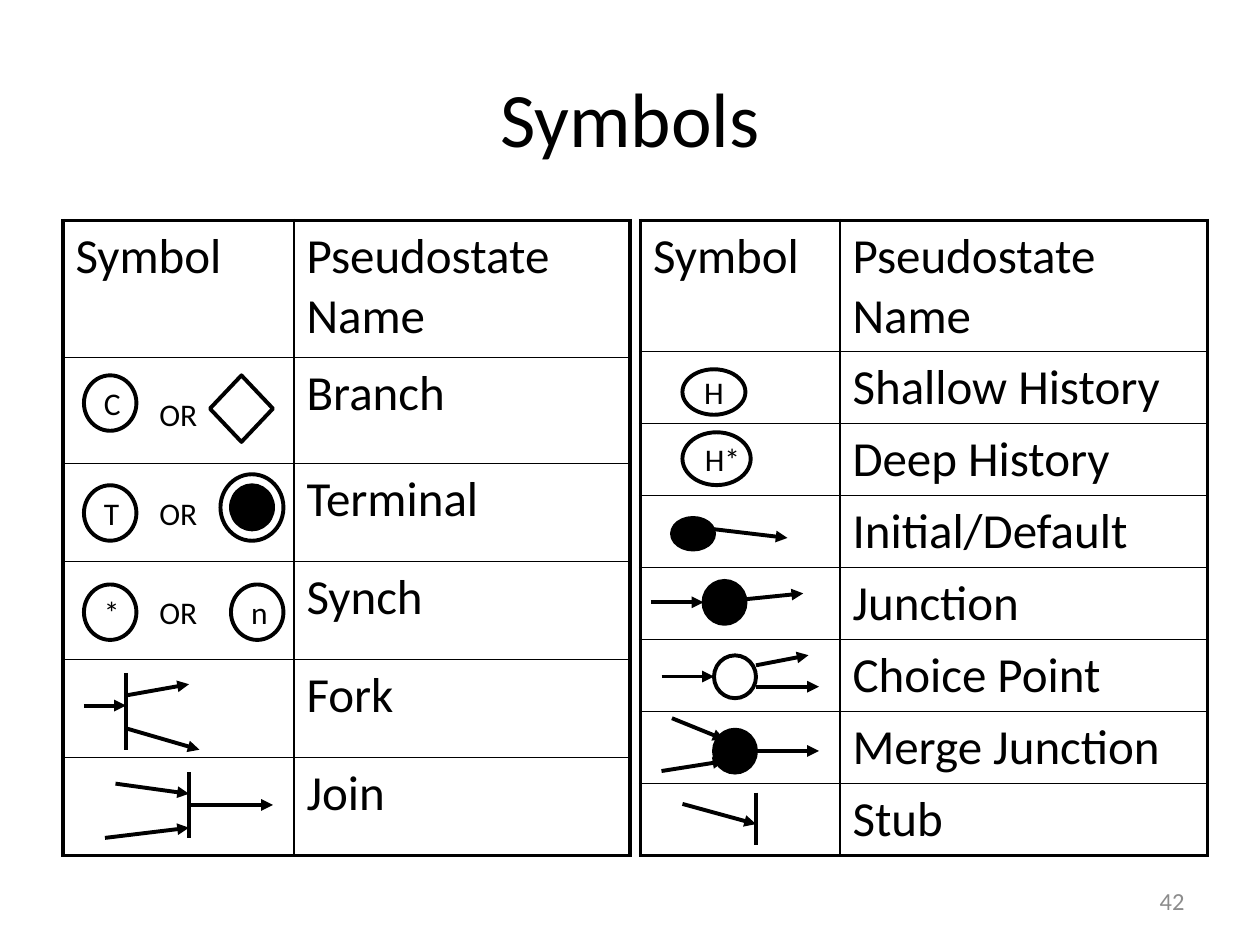
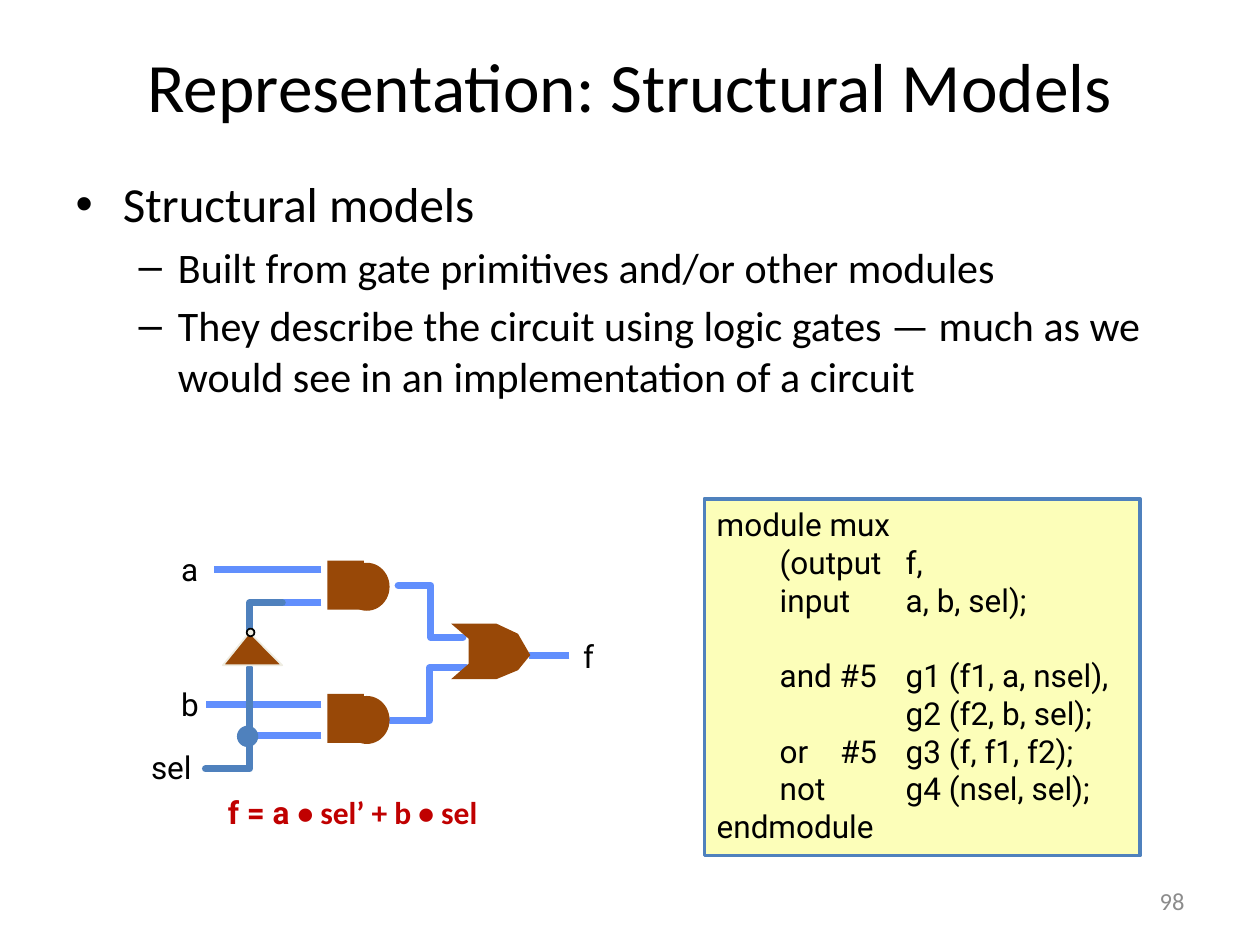
from dataclasses import dataclass
from typing import NamedTuple, Optional

from lxml.etree import SubElement
from pptx import Presentation
from pptx.dml.color import RGBColor
from pptx.enum.shapes import MSO_CONNECTOR as Connector, MSO_SHAPE as Preset
from pptx.enum.text import MSO_ANCHOR as Anchor, MSO_AUTO_SIZE as AutoSize, PP_ALIGN as Align
from pptx.oxml.ns import qn
from pptx.util import Pt


# ---- Theme ----
@dataclass(frozen=True)
class Theme:
    black: str = "000000"
    white: str = "FFFFFF"
    grey: str = "8C8C8C"
    blue: str = "4F81BD"
    wire: str = "618FFD"
    gate: str = "984807"
    cream: str = "FCFEB9"
    ivory: str = "EEECE1"
    red: str = "C00000"
    font: str = "Calibri"
    code_font: str = "Roboto"
    title: float = 44
    long_title: float = 39.6
    body: float = 28
    sub_body: float = 24
    label: float = 18
    page_number: float = 14
    thin: float = 1
    code_border: float = 2
    thick: float = 2.25
    wire_width: float = 4


THEME = Theme()


class Box(NamedTuple):
    left: float
    top: float
    width: float
    height: float


class Figure(NamedTuple):
    preset: Preset
    box: Box
    fill: str = THEME.white
    line: Optional[str] = THEME.black
    width: float = THEME.thick
    text: str = ""


class Line(NamedTuple):
    x1: float
    y1: float
    x2: float
    y2: float
    arrow: bool = True
    color: str = THEME.black
    width: float = THEME.thick


class Path(NamedTuple):
    points: list
    line: Optional[str] = None
    width: float = THEME.wire_width
    fill: Optional[str] = None


class Grid(NamedTuple):
    left: float
    columns: list
    heights: list
    names: list


# ---- Drawing functions ----
def color_of(value: str) -> RGBColor:
    return RGBColor.from_string(value)


def write(frame, text: str, *, size: float = THEME.label, font: str = THEME.font,
          color: str = THEME.black, bold: bool = False, align=None, level: int = 0,
          spacing=None, before=None, tabs=(), same_paragraph: bool = False):
    """Add a paragraph, or a run in the last one, to a text frame."""
    paragraph = frame.paragraphs[-1]
    if paragraph.runs and not same_paragraph:
        paragraph = frame.add_paragraph()
    if not same_paragraph:
        paragraph.level = level
        paragraph.alignment = align
        paragraph.line_spacing = spacing
        if before is not None:
            paragraph.space_before = Pt(before)
        if tabs:
            tab_list = SubElement(paragraph._p.get_or_add_pPr(), qn("a:tabLst"))
            for stop in tabs:
                SubElement(tab_list, qn("a:tab"), pos=str(int(Pt(stop))), algn="l")
    run = paragraph.add_run()
    run.text = text
    run.font.size = Pt(size)
    run.font.name = font
    run.font.bold = bold
    run.font.color.rgb = color_of(color)


def place(shape, box: Box) -> None:
    shape.left, shape.top, shape.width, shape.height = map(Pt, box)


def paint(shape, fill: Optional[str], line: Optional[str], width: float) -> None:
    shape.shadow.inherit = False
    if fill:
        shape.fill.solid()
        shape.fill.fore_color.rgb = color_of(fill)
    else:
        shape.fill.background()
    if line:
        shape.line.color.rgb = color_of(line)
        shape.line.width = Pt(width)
    else:
        shape.line.fill.background()


def add_figure(slide, figure: Figure):
    shape = slide.shapes.add_shape(figure.preset, *map(Pt, figure.box))
    paint(shape, figure.fill, figure.line, figure.width)
    if figure.text:
        frame = shape.text_frame
        frame.word_wrap = False
        frame.vertical_anchor = Anchor.MIDDLE
        write(frame, figure.text, align=Align.LEFT)
    return shape


def add_line(slide, line: Line) -> None:
    connector = slide.shapes.add_connector(Connector.STRAIGHT, *map(Pt, line[:4]))
    connector.line.color.rgb = color_of(line.color)
    connector.line.width = Pt(line.width)
    if line.arrow:
        SubElement(connector.line._get_or_add_ln(), qn("a:tailEnd"), type="triangle")
    SubElement(connector._element.spPr, qn("a:effectLst"))


def add_path(slide, path: Path) -> None:
    points = [(Pt(x), Pt(y)) for x, y in path.points]
    builder = slide.shapes.build_freeform(*points[0])
    builder.add_line_segments(points[1:], close=path.fill is not None)
    shape = builder.convert_to_shape()
    paint(shape, path.fill, path.line, path.width)
    if not path.fill:
        shape.line._get_or_add_ln().set("cap", "rnd")


def add_label(slide, box: Box, *, wrap: bool = False, anchor=Anchor.TOP):
    frame = slide.shapes.add_textbox(*map(Pt, box)).text_frame
    frame.word_wrap = wrap
    frame.vertical_anchor = anchor
    return frame


def set_borders(cell, widths: dict) -> None:
    properties = cell._tc.get_or_add_tcPr()
    for index, (side, width) in enumerate(widths.items()):
        border = SubElement(properties, qn(f"a:ln{side}"), w=str(int(Pt(width))))
        fill = SubElement(border, qn("a:solidFill"))
        SubElement(fill, qn("a:srgbClr"), val=THEME.black)
        properties.insert(index, border)


def add_grid(slide, grid: Grid, top: float) -> None:
    rows = [("Symbol", "Pseudostate Name")] + [("", name) for name in grid.names]
    box = Box(grid.left, top, sum(grid.columns), sum(grid.heights))
    table = slide.shapes.add_table(len(rows), len(grid.columns), *map(Pt, box)).table
    table.first_row = table.horz_banding = False
    for column, width in zip(table.columns, grid.columns):
        column.width = Pt(width)
    for r, (texts, height) in enumerate(zip(rows, grid.heights)):
        table.rows[r].height = Pt(height)
        for c, text in enumerate(texts):
            cell = table.cell(r, c)
            cell.margin_bottom = 0
            cell.fill.background()
            outer = {"L": c == 0, "R": c == 1, "T": r == 0, "B": r == len(rows) - 1}
            set_borders(cell, {side: THEME.thick if edge else THEME.thin
                               for side, edge in outer.items()})
            if text:
                write(cell.text_frame, text, size=THEME.body)


def start_slide(presentation, layout: int, title: str, box: Box, size: float, number: int):
    slide = presentation.slides.add_slide(presentation.slide_layouts[layout])
    place(slide.shapes.title, box)
    frame = slide.shapes.title.text_frame
    frame.auto_size = AutoSize.NONE
    write(frame, title, size=size, align=Align.CENTER)
    write(add_label(slide, Box(516, 500.5, 168, 28.75), wrap=True, anchor=Anchor.MIDDLE),
          str(number), size=THEME.page_number, color=THEME.grey, align=Align.RIGHT)
    return slide


# ---- Slide: symbols ----
def circle(left: float, top: float, width: float, height: float,
           text: str = "", fill: str = THEME.white) -> Figure:
    return Figure(Preset.OVAL, Box(left, top, width, height), fill, text=text)


def build_symbols(presentation) -> None:
    slide = start_slide(presentation, 5, "Symbols", Box(36, 21.6, 648, 90), THEME.title, 42)
    add_grid(slide, Grid(36, [132, 192], [78.4, 60.6] + [56] * 4,
                         ["Branch", "Terminal", "Synch", "Fork", "Join"]), 126)
    add_grid(slide, Grid(366, [114, 210], [75] + [41.14] * 7,
                         ["Shallow History", "Deep History", "Initial/Default", "Junction",
                          "Choice Point", "Merge Junction", "Stub"]), 126)

    # Letter circles, each with an alternative
    for letter, top, or_top in (("C", 214.5, 220.5), ("T", 277.3, 277.3), ("*", 334, 334)):
        add_figure(slide, circle(48, top, 30, 31.7, letter))
        add_figure(slide, Figure(Preset.RECTANGLE, Box(84, or_top, 24, 31.7),
                                 line=THEME.white, text="OR"))
    figures = [
        Figure(Preset.DIAMOND, Box(120, 214.5, 36, 38)),
        circle(126, 271, 36, 38),
        circle(132, 277.3, 24, 25.2, fill=THEME.black),
        circle(132, 334, 30, 31.7, "n"),
        # History, initial, junction, choice point and merge
        circle(390, 211, 36, 26, "H"),
        circle(390, 247, 39, 30.2, "H*"),
        circle(384, 296, 24, 18, fill=THEME.black),
        circle(402, 332, 24, 24.5, fill=THEME.black),
        circle(408, 374.5, 24, 24.5),
        circle(408, 417, 24, 24.5, fill=THEME.black),
    ]
    for figure in figures:
        add_figure(slide, figure)

    lines = [
        # Fork
        Line(72, 384.5, 72, 428.4, arrow=False),
        Line(48, 403.2, 72, 403.2), Line(72, 397.4, 108, 391), Line(72, 416.2, 114, 428.4),
        # Join
        Line(108, 441.4, 108, 478.8, arrow=False),
        Line(66, 447.8, 108, 453.6), Line(60, 478.8, 108, 473), Line(108, 460, 156, 460),
        # Initial and junction
        Line(402, 301.7, 450, 307.4),
        Line(372, 344.2, 402, 344.2), Line(423.4, 342.7, 459, 339.1),
        # Choice point
        Line(378, 386.6, 408, 386.6), Line(432, 380.2, 462, 374.4),
        Line(432, 392.4, 468, 392.4),
        # Merge junction
        Line(378, 440.6, 414, 434.9), Line(384, 410.4, 414, 422.6),
        Line(432, 429.1, 468, 429.1),
        # Stub
        Line(432, 452.9, 432, 483.1, arrow=False), Line(390, 459.4, 432, 470.9),
    ]
    for line in lines:
        add_line(slide, line)


# ---- Slide: structural models ----
def build_structural_models(presentation) -> None:
    slide = start_slide(presentation, 1, "Representation: Structural Models",
                        Box(36, 21.6, 648, 53.3), THEME.long_title, 98)
    body = slide.placeholders[1]
    place(body, Box(36, 95.8, 648, 183))
    body.text_frame.auto_size = AutoSize.NONE
    write(body.text_frame, "Structural models", size=THEME.body)
    for text in ("Built from gate primitives and/or other modules",
                 "They describe the circuit using logic gates — much as we would see "
                 "in an implementation of a circuit"):
        write(body.text_frame, text, size=THEME.sub_body, level=1)

    # Code listing
    code = add_figure(slide, Figure(Preset.RECTANGLE, Box(402.5, 285, 249, 204),
                                    THEME.cream, THEME.blue, THEME.code_border)).text_frame
    code.word_wrap = True
    code.vertical_anchor = Anchor.TOP
    stops, gate_stops = (36, 108), (36, 70.5, 108)
    for text, tabs, before in (
            ("module mux", stops, 0), ("\t(output\tf,", stops, 0),
            ("\tinput\ta, b, sel);", stops, 0),
            ("\tand #5\tg1 (f1, a, nsel),", stops, 21.5),
            ("\t\tg2 (f2, b, sel);", stops, 0), ("\tor\t#5\tg3 (f, f1, f2);", gate_stops, 0),
            ("\tnot\tg4 (nsel, sel);", stops, 0), ("endmodule", stops, 0)):
        write(code, text, font=THEME.code_font, align=Align.LEFT, tabs=tabs, before=before)

    # Wires
    for points in ([(227.5, 334.6), (246.2, 334.6), (246.2, 364.3), (264.5, 364.3)],
                   [(223.2, 411.8), (245.5, 411.8), (245.5, 381.6), (266.4, 381.6)]):
        add_path(slide, Path(points, THEME.wire))
    for start, end, y in ((183.6, 122.4, 325.4), (183.6, 160.6, 344.5), (183.6, 141, 420.5),
                          (183.6, 118, 402.5), (325.4, 302.4, 374.4)):
        add_line(slide, Line(start, y, end, y, False, THEME.wire, THEME.wire_width))
    for points in ([(142.6, 360.7), (142.6, 344.5), (161.3, 344.5)],
                   [(142.6, 381.6), (142.6, 439.4), (117.4, 439.4)]):
        add_path(slide, Path(points, THEME.blue))

    # Gates
    for top in (320.4, 396.5):
        add_figure(slide, Figure(Preset.OVAL, Box(196.6, top + 1.2, 26, 27.4),
                                 THEME.gate, None))
        add_figure(slide, Figure(Preset.RECTANGLE, Box(187, top, 21, 28), THEME.gate, None))
    add_path(slide, Path([(283.7, 356.4), (296, 362.2), (303, 374.4), (296, 383), (283.7, 388.1),
                          (257.8, 388.1), (267.8, 379.4), (267.8, 365), (257.8, 356.4)],
                         fill=THEME.gate))
    add_path(slide, Path([(127.4, 380.2), (161.3, 380.2), (142.6, 361.4)],
                         THEME.ivory, THEME.thin, THEME.gate))
    add_figure(slide, Figure(Preset.OVAL, Box(141, 359.2, 4.4, 4.4), THEME.ivory,
                             width=THEME.thin))
    add_figure(slide, Figure(Preset.OVAL, Box(135.4, 414.7, 12.2, 12.2), THEME.blue, None))

    # Signal names and formula
    for text, box, spacing in (("a", Box(96.5, 311, 24.5, 29), None),
                               ("b", Box(96.5, 388, 25, 29), None),
                               ("f", Box(326.2, 360.7, 20, 29), None),
                               ("sel", Box(79.2, 426.2, 39.6, 26.6), 0.9)):
        write(add_label(slide, box), text, font=THEME.code_font, spacing=spacing)
    formula = add_label(slide, Box(123.1, 452.2, 160.6, 26.6))
    write(formula, "f = a ", font=THEME.code_font, color=THEME.red, bold=True, spacing=0.9)
    write(formula, "• sel’ + b • sel", color=THEME.red, bold=True, same_paragraph=True)


def main() -> None:
    presentation = Presentation()
    presentation.slide_width, presentation.slide_height = Pt(720), Pt(540)
    build_symbols(presentation)
    build_structural_models(presentation)
    presentation.save("out.pptx")


if __name__ == "__main__":
    main()
